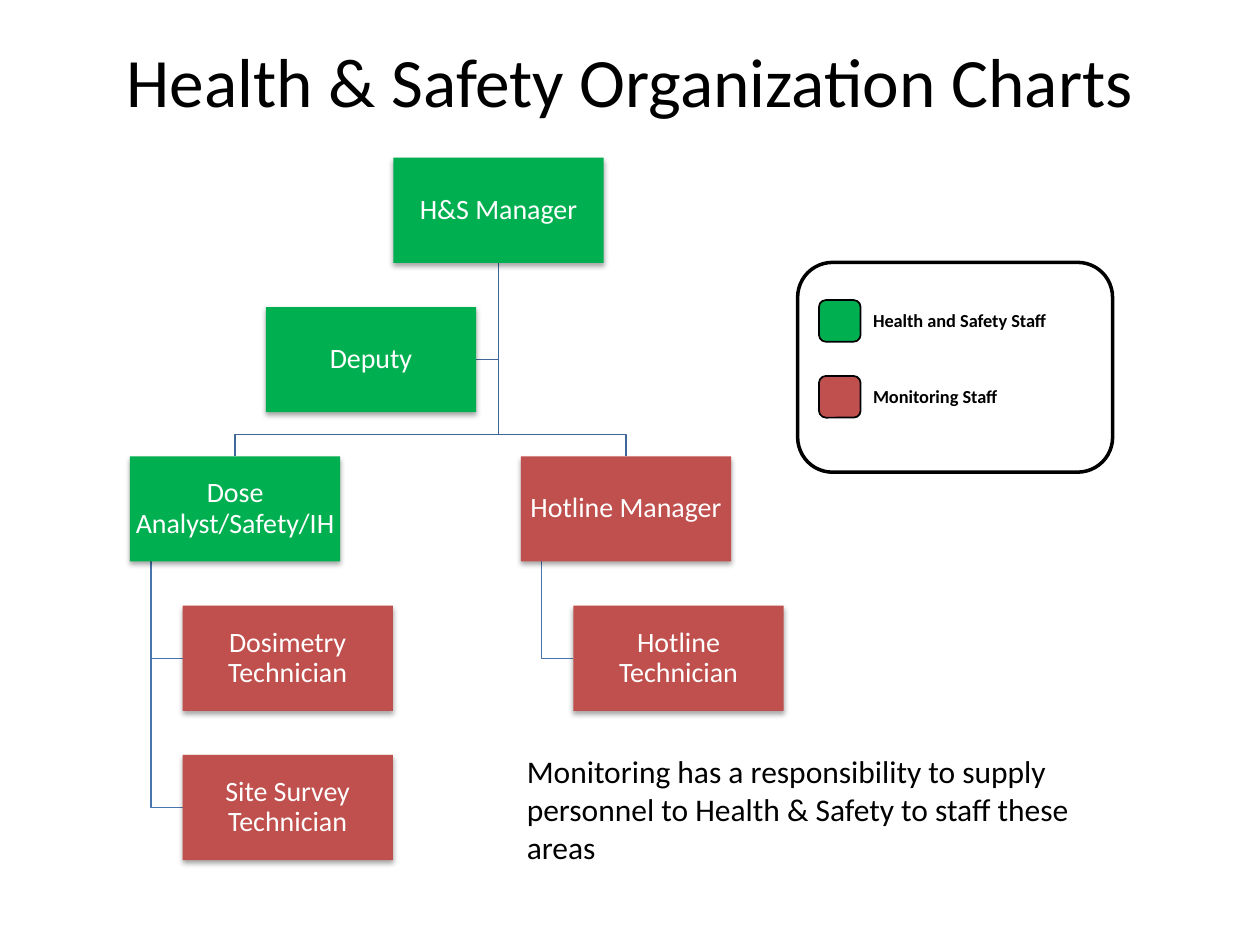
from lxml.etree import SubElement
from pptx import Presentation
from pptx.dml.color import RGBColor
from pptx.enum.shapes import MSO_SHAPE as Preset
from pptx.enum.text import MSO_ANCHOR as Anchor, MSO_AUTO_SIZE as AutoSize, PP_ALIGN as Align
from pptx.oxml.ns import qn
from pptx.util import Cm, Pt

GREEN, RED, BLACK, WHITE = "00B050", "C0504D", "000000", "FFFFFF"
TRUNK_BLUE, BRANCH_BLUE = "3F6797", "4875AC"


def rgb(color):
    return RGBColor.from_string(color)


def write_text(shape, text, size=18, color=BLACK, bold=False, align=Align.LEFT,
               anchor=Anchor.TOP, spacing=None):
    frame = shape.text_frame
    frame.word_wrap = True
    frame.vertical_anchor = anchor
    paragraph = frame.paragraphs[0]
    paragraph.alignment = align
    paragraph.line_spacing = spacing
    run = paragraph.add_run()
    run.text = text
    run.font.name = "Calibri"
    run.font.size = Pt(size)
    run.font.bold = bold
    run.font.color.rgb = rgb(color)


def add_note(slide, left, top, width, height, text, **text_format):
    note = slide.shapes.add_textbox(Cm(left), Cm(top), Cm(width), Cm(height))
    write_text(note, text, **text_format)
    note.text_frame.auto_size = AutoSize.SHAPE_TO_FIT_TEXT


def add_panel(slide, preset, left, top, width, height, fill, line_width=0):
    panel = slide.shapes.add_shape(preset, Cm(left), Cm(top), Cm(width), Cm(height))
    panel.shadow.inherit = False
    panel.fill.solid()
    panel.fill.fore_color.rgb = rgb(fill)
    if line_width:
        panel.line.color.rgb = rgb(BLACK)
        panel.line.width = Pt(line_width)
    else:
        panel.line.fill.background()
    return panel


def add_soft_shadow(shape):
    effects = shape.element.spPr.find(qn("a:effectLst"))
    shadow = SubElement(effects, qn("a:outerShdw"), blurRad=str(Pt(3.1)),
                        dist=str(Pt(1.8)), dir="5400000", rotWithShape="0")
    shade = SubElement(shadow, qn("a:srgbClr"), val=BLACK)
    SubElement(shade, qn("a:alpha"), val="35000")


def add_elbow(slide, color, start, *bends):
    points = [(Cm(x), Cm(y)) for x, y in (start, *bends)]
    builder = slide.shapes.build_freeform(*points[0])
    builder.add_line_segments(points[1:], close=False)
    elbow = builder.convert_to_shape()
    elbow.shadow.inherit = False
    elbow.fill.background()
    elbow.line.color.rgb = rgb(color)
    elbow.line.width = Pt(0.75)


def add_title(slide, left, top, width, height):
    title = slide.shapes.title
    title.left, title.top, title.width, title.height = map(Cm, (left, top, width, height))
    title.text_frame.margin_top = 0
    write_text(title, "Health & Safety Organization Charts", size=39.6, align=Align.CENTER)


def add_org_chart(slide, left, top, row_pitch):
    width, height = 4.24, 2.12
    indent, hotline = width / 4, 7.88
    # role: (offset from the left edge, row, colour)
    roles = {
        "H&S Manager": (5.31, 0, GREEN),
        "Deputy": (2.74, 1, GREEN),
        "Dose Analyst/Safety/IH": (0, 2, GREEN),
        "Hotline Manager": (hotline, 2, RED),
        "Dosimetry Technician": (indent, 3, RED),
        "Site Survey Technician": (indent, 4, RED),
        "Hotline Technician": (hotline + indent, 3, RED),
    }
    corner = {role: (left + x, top + row * row_pitch) for role, (x, row, _) in roles.items()}

    manager_x, manager_y = corner["H&S Manager"]
    trunk = (manager_x + width / 2, manager_y + height)
    for lead in ("Dose Analyst/Safety/IH", "Hotline Manager"):
        x, y = corner[lead]
        bus = y - (row_pitch - height) / 2
        add_elbow(slide, TRUNK_BLUE, trunk, (trunk[0], bus),
                  (x + width / 2, bus), (x + width / 2, y))
    deputy_x, deputy_y = corner["Deputy"]
    deputy_middle = deputy_y + height / 2
    add_elbow(slide, TRUNK_BLUE, trunk, (trunk[0], deputy_middle),
              (deputy_x + width, deputy_middle))

    for lead, technician in (("Dose Analyst/Safety/IH", "Dosimetry Technician"),
                             ("Dose Analyst/Safety/IH", "Site Survey Technician"),
                             ("Hotline Manager", "Hotline Technician")):
        x, y = corner[lead]
        tech_x, tech_y = corner[technician]
        stem, middle = x + width / 10, tech_y + height / 2
        add_elbow(slide, BRANCH_BLUE, (stem, y + height), (stem, middle), (tech_x, middle))

    for role, (_, _, color) in roles.items():
        box = add_panel(slide, Preset.RECTANGLE, *corner[role], width, height, color)
        add_soft_shadow(box)
        frame = box.text_frame
        frame.margin_left = frame.margin_right = Cm(0.03)
        frame.margin_top = frame.margin_bottom = Cm(0.03)
        write_text(box, role, size=16, color=WHITE, align=Align.CENTER,
                   anchor=Anchor.MIDDLE, spacing=0.9)


def add_legend(slide, left, top, width, height):
    add_panel(slide, Preset.ROUNDED_RECTANGLE, left, top, width, height, WHITE, line_width=2)
    swatch = 0.84
    entries = (("Health and Safety Staff", GREEN), ("Monitoring Staff", RED))
    for row, (label, color) in enumerate(entries):
        y = top + 0.76 + row * 1.53
        add_panel(slide, Preset.ROUNDED_RECTANGLE, left + 0.43, y, swatch, swatch,
                  color, line_width=1)
        add_note(slide, left + 0.43 + swatch, y + 0.05, 4.65, 0.71, label,
                 size=10.5, bold=True)


def main():
    deck = Presentation()
    deck.slide_width, deck.slide_height = Cm(25.4), Cm(19.05)
    slide = deck.slides.add_slide(deck.slide_layouts[5])
    add_title(slide, 1.27, 0.76, 22.86, 3.18)
    add_org_chart(slide, 2.62, 3.18, row_pitch=3.01)
    add_legend(slide, 16.08, 5.29, 6.35, 4.23)
    add_note(slide, 10.37, 15.04, 11.86, 2.57,
             "Monitoring has a responsibility to supply personnel to "
             "Health & Safety to staff these areas")
    deck.save("out.pptx")


if __name__ == "__main__":
    main()
